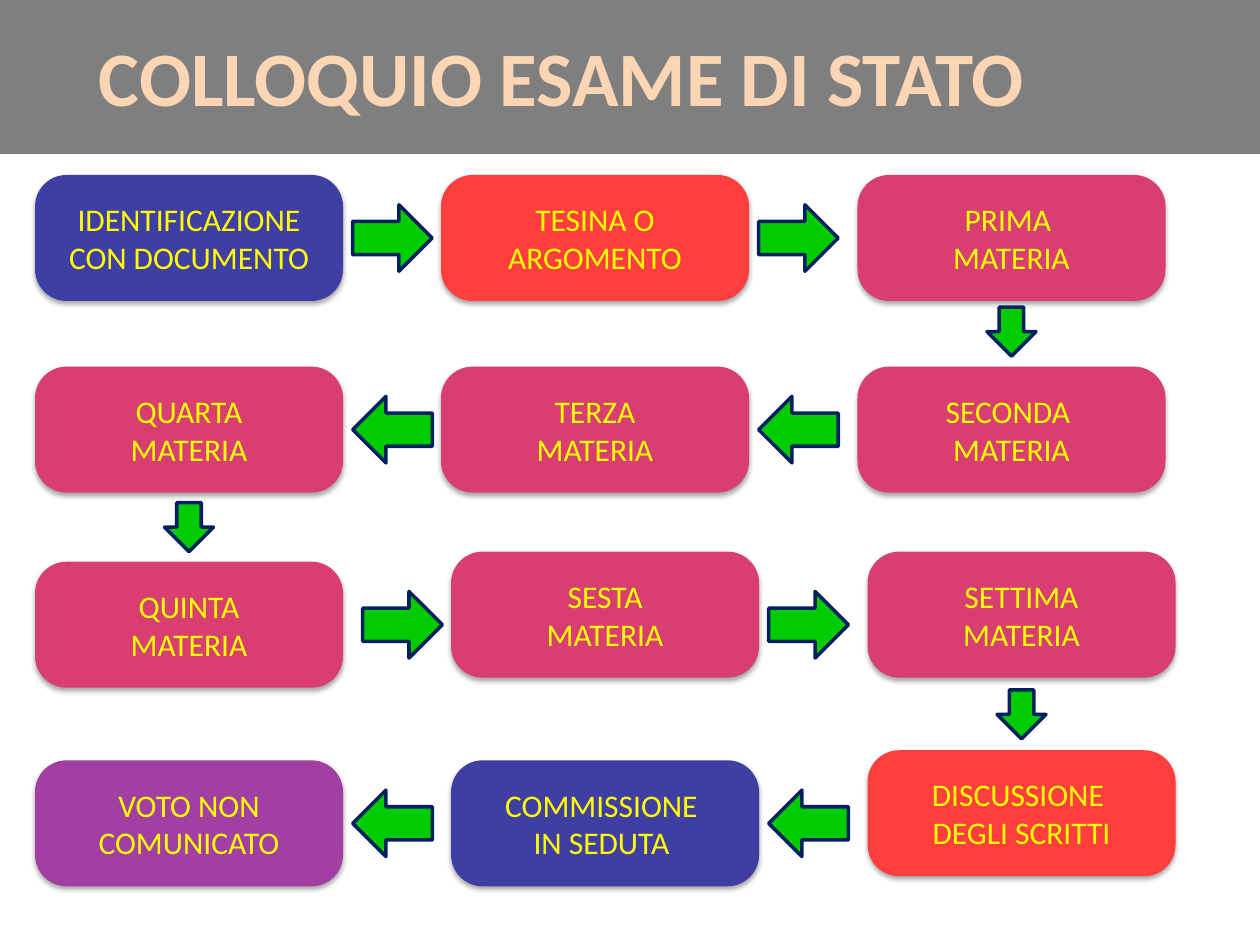
from lxml import etree
from pptx import Presentation
from pptx.dml.color import RGBColor
from pptx.enum.shapes import MSO_SHAPE
from pptx.enum.text import MSO_ANCHOR, PP_ALIGN
from pptx.oxml.ns import qn
from pptx.util import Pt

ROUNDED, ARROW = MSO_SHAPE.ROUNDED_RECTANGLE, MSO_SHAPE.RIGHT_ARROW
CENTER, MIDDLE = PP_ALIGN.CENTER, MSO_ANCHOR.MIDDLE

COLORS = {
    "band": "000000", "heading": "FCD5B5", "label": "FFFF00",
    "blue": "3F3EA2", "red": "FF3E3E", "pink": "D83E70", "purple": "A33EA2",
    "arrow": "00CC00", "arrow_edge": "002060", "shadow": "000000",
}

# Content: steps by row, left to right, as (label, fill, shift right, shift up)
TITLE = "COLLOQUIO ESAME DI STATO"
SHIFT = 5.75
STEPS = [
    [("IDENTIFICAZIONE CON DOCUMENTO", "blue", 0, 0),
     ("TESINA O ARGOMENTO", "red", 0, 0),
     ("PRIMA \nMATERIA", "pink", 0, 0)],
    [("QUARTA\nMATERIA", "pink", 0, 0),
     ("TERZA\nMATERIA", "pink", 0, 0),
     ("SECONDA \nMATERIA", "pink", 0, 0)],
    [("QUINTA\nMATERIA", "pink", 0, 0),
     ("SESTA\nMATERIA", "pink", SHIFT, SHIFT),
     ("SETTIMA\nMATERIA", "pink", SHIFT, SHIFT)],
    [("VOTO NON COMUNICATO", "purple", 0, 0),
     ("COMMISSIONE \nIN SEDUTA ", "blue", SHIFT, 0),
     ("DISCUSSIONE \nDEGLI SCRITTI", "red", SHIFT, SHIFT)],
]
# Shift right of the two arrows in each row
ARROW_SHIFTS = [(0, 0), (0, 0), (SHIFT, SHIFT), (0, SHIFT)]
# Arrows down to the next row: (row, column, gap under the step)
DOWN_ARROWS = [(0, 2, 3.5), (1, 0, 5.75), (2, 2, 7)]

# Grid
COLUMNS = [20, 252, 490]
ROWS = [100, 209.5, 321, 434.5]
STEP_W, STEP_H = 176, 72
ARROW_COLUMNS = [201.5, 433.5]
ARROW_W, ARROW_H = 45.5, 38
DOWN_SIZE = 28


def rgb(name):
    return RGBColor.from_string(COLORS[name])


def write(shape, text, size, color, bold=False):
    frame = shape.text_frame
    frame.word_wrap = True
    frame.vertical_anchor = MIDDLE
    paragraph = frame.paragraphs[0]
    paragraph.text = text
    paragraph.alignment = CENTER
    for run in paragraph.runs:
        run.font.name = "Calibri"
        run.font.size = Pt(size)
        run.font.bold = bold
        run.font.color.rgb = rgb(color)


def add_alpha(color_element, percent):
    etree.SubElement(color_element, qn("a:alpha"), val=str(percent * 1000))


def add_filled(kind, x, y, w, h, fill):
    shape = slide.shapes.add_shape(kind, Pt(x), Pt(y), Pt(w), Pt(h))
    shape.shadow.inherit = False
    shape.fill.solid()
    shape.fill.fore_color.rgb = rgb(fill)
    return shape


def add_step(x, y, label, fill):
    step = add_filled(ROUNDED, x, y, STEP_W, STEP_H, fill)
    step.adjustments[0] = 0.25
    step.line.fill.background()
    effects = step._element.spPr.find(qn("a:effectLst"))
    shadow = etree.SubElement(
        effects, qn("a:outerShdw"), blurRad=str(Pt(3.1)), dist=str(Pt(1.8)),
        dir="5400000", rotWithShape="0")
    shade = etree.SubElement(shadow, qn("a:srgbClr"), val=COLORS["shadow"])
    add_alpha(shade, 35)
    write(step, label, 18, "label")


def add_arrow(x, y, w, h, rotation):
    arrow = add_filled(ARROW, x, y, w, h, "arrow")
    arrow.rotation = rotation
    arrow.line.color.rgb = rgb("arrow_edge")
    arrow.line.width = Pt(2)


def step_position(row, column):
    _, _, right, up = STEPS[row][column]
    return COLUMNS[column] + right, ROWS[row] - up


prs = Presentation()
prs.slide_width, prs.slide_height = Pt(720), Pt(540)
slide = prs.slides.add_slide(prs.slide_layouts[5])

# Title band
title = slide.shapes.title
title.left, title.top, title.width, title.height = Pt(0), Pt(-2), Pt(720), Pt(90)
title.fill.solid()
title.fill.fore_color.rgb = rgb("band")
add_alpha(title._element.spPr.find(qn("a:solidFill"))[0], 50)
title.text_frame.margin_right = Pt(85)
write(title, TITLE, 44, "heading", bold=True)

# Steps, with arrows that change direction from row to row
for row, steps in enumerate(STEPS):
    for column, (label, fill, _, _) in enumerate(steps):
        add_step(*step_position(row, column), label, fill)
    for x, shift in zip(ARROW_COLUMNS, ARROW_SHIFTS[row]):
        add_arrow(x + shift, ROWS[row] + (STEP_H - ARROW_H) / 2,
                  ARROW_W, ARROW_H, 180 * (row % 2))

# Arrows to the next row
for row, column, gap in DOWN_ARROWS:
    x, y = step_position(row, column)
    add_arrow(x + (STEP_W - DOWN_SIZE) / 2, y + STEP_H + gap,
              DOWN_SIZE, DOWN_SIZE, 90)

prs.save("out.pptx")
